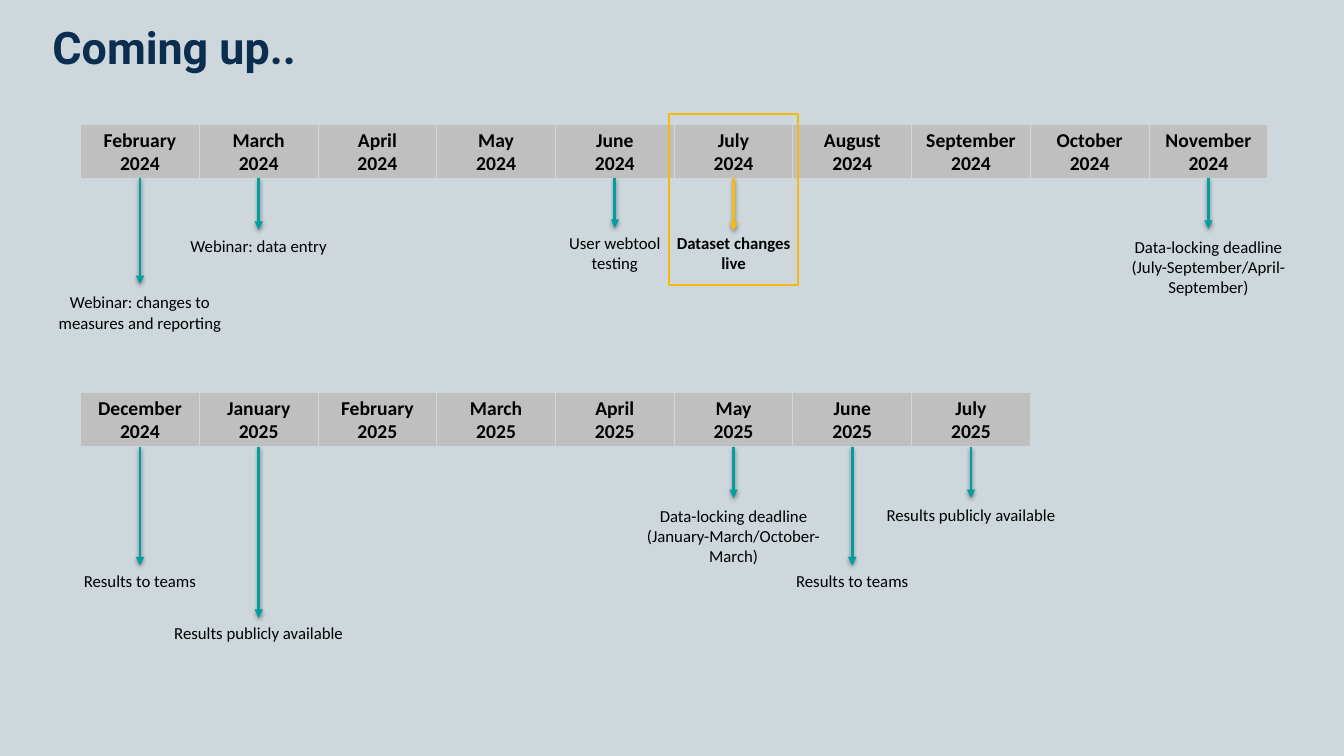
import dataclasses

import lxml.etree
import pptx
import pptx.dml.color
import pptx.enum.shapes
import pptx.enum.text
import pptx.oxml
import pptx.oxml.ns
import pptx.util

Pt = pptx.util.Pt


@dataclasses.dataclass(frozen=True)
class Theme:
    background: str = "CDD7DC"
    month_fill: str = "BFBFBF"
    arrow: str = "009EA0"
    highlight: str = "F5B90F"
    title: str = "0A2D50"
    text: str = "000000"
    title_font: str = "Roboto"
    body_font: str = "Calibri"
    title_size: int = 32
    month_size: int = 14
    note_size: int = 12


@dataclasses.dataclass(frozen=True)
class Event:
    column: int
    arrow_end: float
    note_top: float
    note_width: float
    line_count: int
    note: str
    highlighted: bool = False


THEME = Theme()

# Month grid, in points
GRID_LEFT = 57.6
MONTH_WIDTH = 84.8
MONTH_HEIGHT = 38.9
FIRST_ROW_TOP = 88.6
SECOND_ROW_TOP = 280.1

FIRST_MONTHS = ["February 2024", "March 2024", "April 2024", "May 2024", "June 2024",
                "July 2024", "August 2024", "September 2024", "October 2024", "November 2024"]
SECOND_MONTHS = ["December 2024", "January 2025", "February 2025", "March 2025",
                 "April 2025", "May 2025", "June 2025", "July 2025"]

FIRST_EVENTS = [
    Event(0, 203, 205.2, 136, 2, "Webinar: changes to measures and reporting"),
    Event(1, 164.2, 164.9, 149, 1, "Webinar: data entry"),
    Event(4, 162.7, 162.7, 95.8, 2, "User webtool testing"),
    Event(5, 164.9, 162.7, 104.4, 2, "Dataset changes live", True),
    Event(9, 163.4, 165.6, 132.5, 3,
          "Data-locking deadline\n(July-September/April-September)"),
]
SECOND_EVENTS = [
    Event(0, 403.9, 403.9, 161.3, 1, "Results to teams"),
    Event(1, 441.4, 441.4, 152, 1, "Results publicly available"),
    Event(5, 355.7, 357.8, 148.3, 3,
          "Data-locking deadline\n(January-March/October-March)"),
    Event(6, 403.9, 403.9, 161.3, 1, "Results to teams"),
    Event(7, 355.7, 357.1, 154.1, 1, "Results publicly available"),
]


def rgb(code):
    return pptx.dml.color.RGBColor.from_string(code)


def column_centre(column):
    return GRID_LEFT + MONTH_WIDTH * (column + 0.5)


def write_text(box, text, size, color, font, bold=False, centred=True):
    frame = box.text_frame
    frame.word_wrap = True
    frame.text = text
    for para in frame.paragraphs:
        if centred:
            para.alignment = pptx.enum.text.PP_ALIGN.CENTER
        for span in para.runs:
            span.font.size = Pt(size)
            span.font.name = font
            span.font.bold = bold
            span.font.color.rgb = rgb(color)
    return frame


def add_title(page, text):
    box = page.shapes.add_textbox(Pt(37.4), Pt(14.4), Pt(884.2), Pt(56.9))
    frame = write_text(box, text, THEME.title_size, THEME.title, THEME.title_font,
                       bold=True, centred=False)
    frame.margin_left = frame.margin_top = frame.margin_right = frame.margin_bottom = 0


def add_rectangle(page, left, top, width, height, line_color, line_width, fill=None):
    box = page.shapes.add_shape(pptx.enum.shapes.MSO_SHAPE.RECTANGLE,
                                Pt(left), Pt(top), Pt(width), Pt(height))
    box.shadow.inherit = False
    box.line.color.rgb = rgb(line_color)
    box.line.width = Pt(line_width)
    if fill:
        box.fill.solid()
        box.fill.fore_color.rgb = rgb(fill)
    else:
        box.fill.background()
    return box


def add_months(page, months, top):
    for column, month in enumerate(months):
        box = add_rectangle(page, GRID_LEFT + MONTH_WIDTH * column, top, MONTH_WIDTH,
                            MONTH_HEIGHT, THEME.background, 0.75, THEME.month_fill)
        frame = write_text(box, month.replace(" ", "\n"), THEME.month_size, THEME.text,
                           THEME.body_font, bold=True)
        frame.vertical_anchor = pptx.enum.text.MSO_ANCHOR.MIDDLE


def add_arrow(page, x, start, end, color):
    arrow = page.shapes.add_connector(pptx.enum.shapes.MSO_CONNECTOR.STRAIGHT,
                                      Pt(x), Pt(start), Pt(x), Pt(end))
    arrow.line.color.rgb = rgb(color)
    arrow.line.width = Pt(2)
    # Arrowhead and soft shadow below
    qn = pptx.oxml.ns.qn
    properties = arrow.element.spPr
    lxml.etree.SubElement(properties.find(qn("a:ln")), qn("a:tailEnd"), type="triangle")
    properties.append(pptx.oxml.parse_xml(
        f'<a:effectLst {pptx.oxml.ns.nsdecls("a")}>'
        f'<a:outerShdw blurRad="{Pt(3.1)}" dist="{Pt(1.6)}" dir="5400000" rotWithShape="0">'
        '<a:srgbClr val="000000"><a:alpha val="38000"/></a:srgbClr>'
        '</a:outerShdw></a:effectLst>'))


def add_note(page, event):
    left = column_centre(event.column) - event.note_width / 2
    height = 7.2 + 14.65 * event.line_count
    box = page.shapes.add_textbox(Pt(left), Pt(event.note_top),
                                  Pt(event.note_width), Pt(height))
    frame = write_text(box, event.note, THEME.note_size, THEME.text, THEME.body_font,
                       bold=event.highlighted)
    frame.auto_size = pptx.enum.text.MSO_AUTO_SIZE.SHAPE_TO_FIT_TEXT


def add_timeline(page, months, events, top):
    add_months(page, months, top)
    for event in events:
        color = THEME.highlight if event.highlighted else THEME.arrow
        add_arrow(page, column_centre(event.column), top + MONTH_HEIGHT,
                  event.arrow_end, color)
        add_note(page, event)


def main():
    deck = pptx.Presentation()
    deck.slide_width, deck.slide_height = Pt(960), Pt(540)
    page = deck.slides.add_slide(deck.slide_layouts[6])
    page.background.fill.solid()
    page.background.fill.fore_color.rgb = rgb(THEME.background)

    # Two timeline rows
    add_timeline(page, SECOND_MONTHS, SECOND_EVENTS, SECOND_ROW_TOP)
    add_timeline(page, FIRST_MONTHS, FIRST_EVENTS, FIRST_ROW_TOP)

    # Title and frame around July 2024
    add_title(page, "Coming up..")
    frame_width = 92.5
    add_rectangle(page, column_centre(5) - frame_width / 2, 81.4, frame_width, 122.4,
                  THEME.highlight, 1.5)

    deck.save("out.pptx")


if __name__ == "__main__":
    main()
